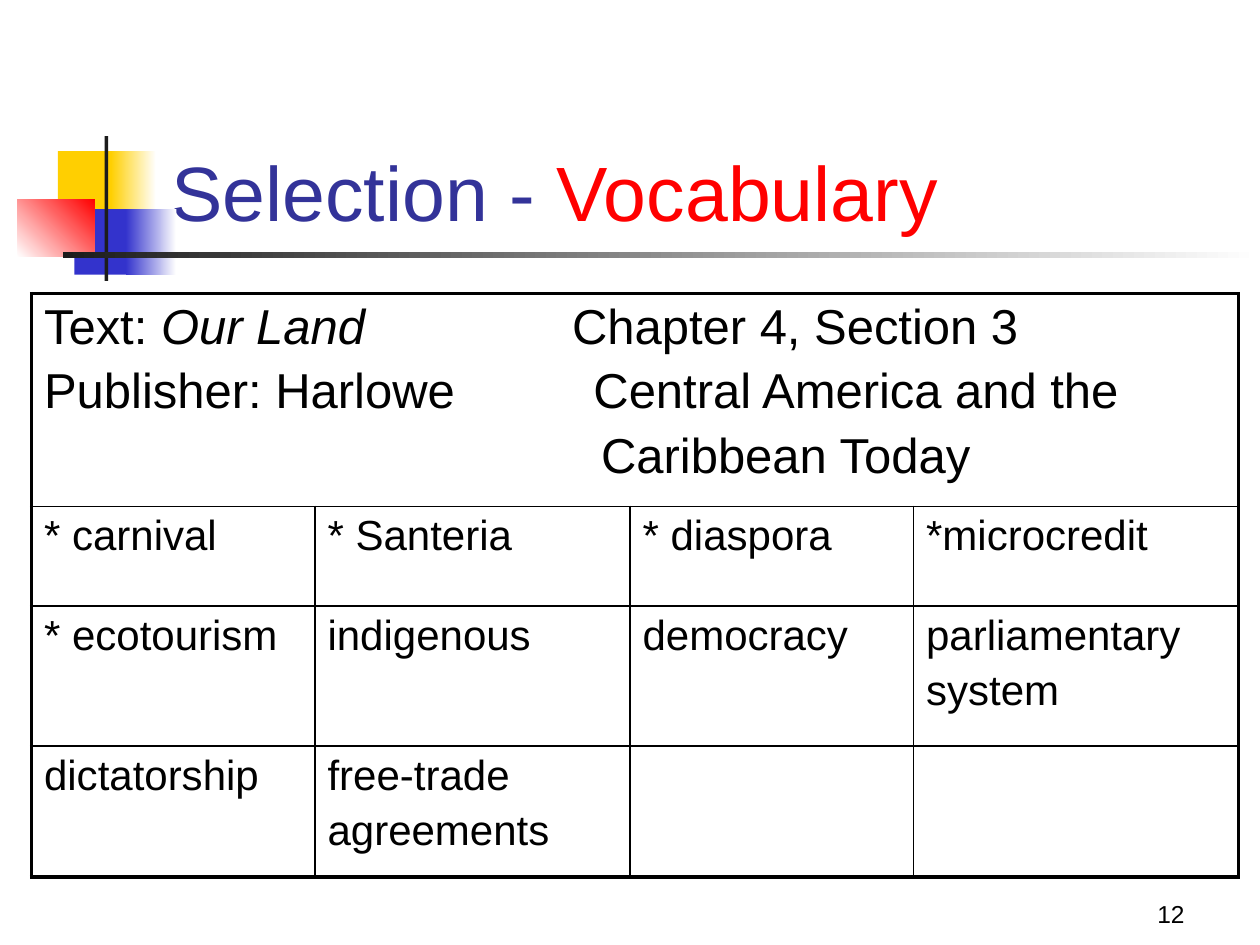
from lxml import etree
from pptx import Presentation
from pptx.dml.color import RGBColor
from pptx.enum import shapes, text
from pptx.oxml.ns import qn
from pptx.util import Inches, Pt

BLACK = RGBColor(0x00, 0x00, 0x00)
WHITE = RGBColor(0xFF, 0xFF, 0xFF)
CHARCOAL = RGBColor(0x1C, 0x1C, 0x1C)
YELLOW = RGBColor(0xFF, 0xCF, 0x01)
BLUE = RGBColor(0x33, 0x33, 0xCC)
RED = RGBColor(0xFF, 0x00, 0x00)
NAVY = RGBColor(0x33, 0x33, 0x99)


def add_run(p, words, size, color=BLACK, italic=None):
    r = p.add_run()
    r.text = words
    r.font.name = "Arial"
    r.font.size = Pt(size)
    r.font.color.rgb = color
    r.font.italic = italic


def add_border(cell, side, width):
    ln = etree.SubElement(cell._tc.get_or_add_tcPr(), qn(f"a:ln{side}"), w=str(Pt(width)))
    fill = etree.SubElement(ln, qn("a:solidFill"))
    etree.SubElement(fill, qn("a:srgbClr"), val=str(BLACK))


prs = Presentation()
prs.slide_width = Inches(10)
prs.slide_height = Inches(7.5)
s = prs.slides.add_slide(prs.slide_layouts[5])

# Decoration: left, top, width, height, colours (two make a gradient), angle
decorations = [
    (0.46, 1.2, 0.48, 0.52, [YELLOW], 0),
    (0.88, 1.2, 0.36, 0.52, [YELLOW, WHITE], 0),
    (0.59, 1.66, 0.46, 0.52, [BLUE], 0),
    (1, 1.66, 0.4, 0.52, [BLUE, WHITE], 0),
    (0.14, 1.58, 0.61, 0.46, [WHITE, RED], 45),
    (0.83, 1.08, 0.03, 1.15, [CHARCOAL], 0),
    (0.5, 2, 9.5, 0.05, [CHARCOAL, WHITE], 0),
]
for left, top, width, height, colors, angle in decorations:
    sp = s.shapes.add_shape(shapes.MSO_SHAPE.RECTANGLE, Inches(left), Inches(top),
                            Inches(width), Inches(height))
    sp.shadow.inherit = False
    sp.line.fill.background()
    if len(colors) == 1:
        sp.fill.solid()
        sp.fill.fore_color.rgb = colors[0]
    else:
        sp.fill.gradient()
        sp.fill.gradient_angle = angle
        for stop, color in zip(sp.fill.gradient_stops, colors):
            stop.color.rgb = color

# Title
title = s.shapes.title
title.left, title.top = Inches(1.26), Inches(0.68)
title.width, title.height = Inches(8.52), Inches(1.25)
tf = title.text_frame
tf.auto_size = text.MSO_AUTO_SIZE.NONE
tf.vertical_anchor = text.MSO_ANCHOR.BOTTOM
p = tf.paragraphs[0]
p.alignment = text.PP_ALIGN.LEFT
add_run(p, "Selection - ", 44, NAVY)
add_run(p, "Vocabulary", 44, RED)

# Slide number
number = s.shapes.add_textbox(Inches(7.42), Inches(6.92), Inches(2.08), Inches(0.5))
tf = number.text_frame
tf.word_wrap = True
tf.vertical_anchor = text.MSO_ANCHOR.BOTTOM
p = tf.paragraphs[0]
p.alignment = text.PP_ALIGN.RIGHT
add_run(p, "12", 14)

# Vocabulary table
col_widths = [2.25, 2.5, 2.25, 2.58]
row_heights = [1.69, 0.79, 1.11, 1.04]
words = [
    ["* carnival", "* Santeria", "* diaspora", "*microcredit"],
    ["* ecotourism", "indigenous", "democracy", "parliamentary\nsystem"],
    ["dictatorship", "free-trade\nagreements", "", ""],
]
table = s.shapes.add_table(4, 4, Inches(0.25), Inches(2.33), Inches(sum(col_widths)),
                           Inches(sum(row_heights))).table
table.first_row = table.horz_banding = False
for column, width in zip(table.columns, col_widths):
    column.width = Inches(width)
for row, height in zip(table.rows, row_heights):
    row.height = Inches(height)

source = table.cell(0, 0)
source.merge(table.cell(0, 3))
# Each line: tab position of its right-hand part, then runs of words and italic
source_lines = [
    (4.19, [("Text: ", False), ("Our Land", True), ("\tChapter 4, Section 3", False)]),
    (4.36, [("Publisher: Harlowe\tCentral America and the", False)]),
    (4.42, [("\tCaribbean Today", False)]),
]
tf = source.text_frame
for i, (tab, runs) in enumerate(source_lines):
    p = tf.add_paragraph() if i else tf.paragraphs[0]
    tabs = etree.SubElement(p._p.get_or_add_pPr(), qn("a:tabLst"))
    etree.SubElement(tabs, qn("a:tab"), pos=str(Inches(tab)), algn="l")
    for phrase, italic in runs:
        add_run(p, phrase, 28, italic=italic)

for i, row in enumerate(words, 1):
    for j, entry in enumerate(row):
        tf = table.cell(i, j).text_frame
        for k, line in enumerate(entry.split("\n") if entry else []):
            p = tf.add_paragraph() if k else tf.paragraphs[0]
            add_run(p, line, 24)

for i in range(4):
    for j in range(4):
        cell = table.cell(i, j)
        outer = {"L": j == 0, "R": j == 3 or i == 0, "T": i == 0, "B": i == 3}
        for side, is_outer in outer.items():
            add_border(cell, side, 2.25 if is_outer else 1)
        cell.fill.background()
        for p in cell.text_frame.paragraphs:
            before = etree.Element(qn("a:spcBef"))
            etree.SubElement(before, qn("a:spcPct"), val="20000")
            p._p.get_or_add_pPr().insert(0, before)

prs.save("out.pptx")
